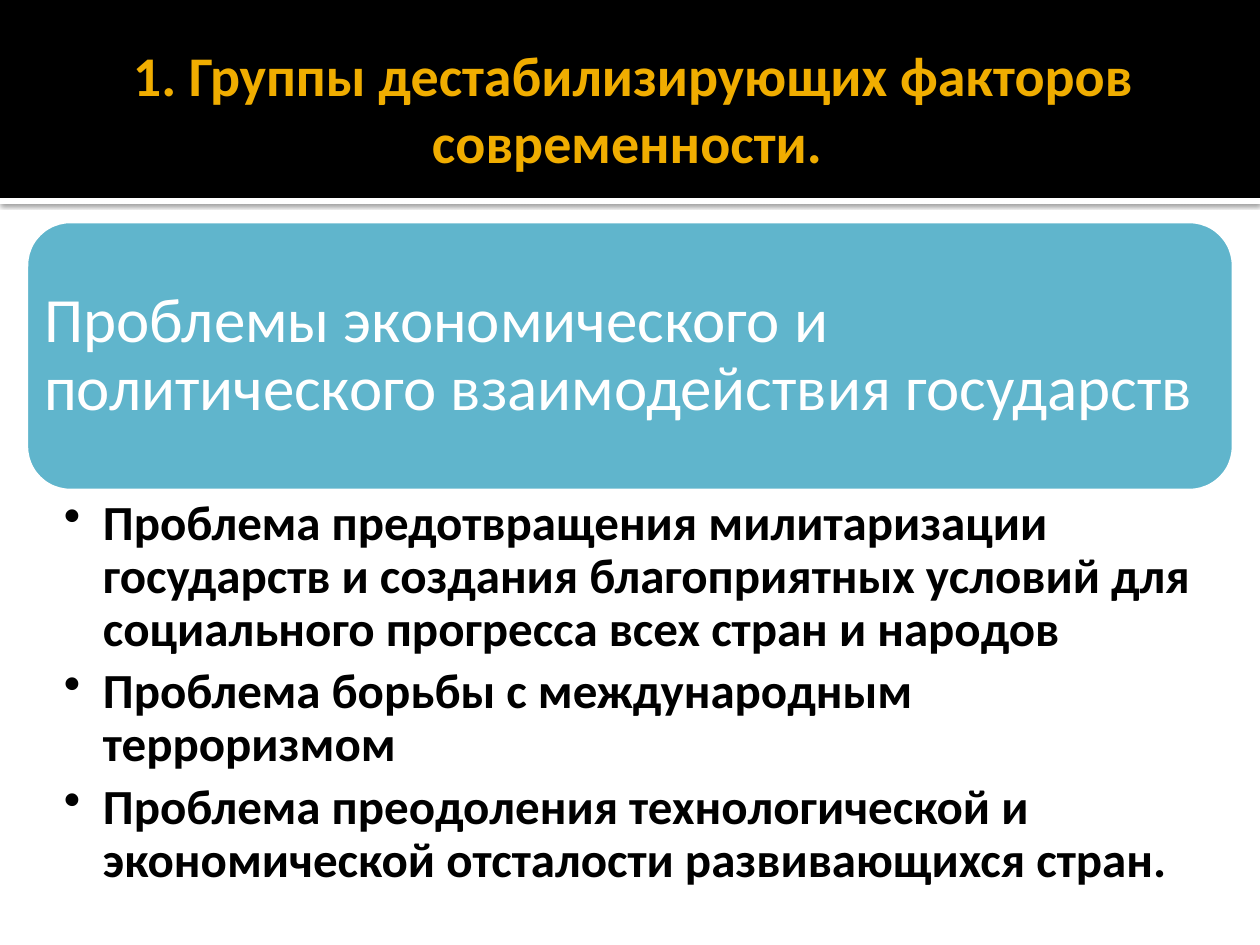
from lxml import etree
from pptx import Presentation
from pptx.dml.color import RGBColor
from pptx.enum.shapes import MSO_SHAPE
from pptx.enum.text import MSO_ANCHOR, PP_ALIGN
from pptx.oxml import parse_xml
from pptx.oxml.ns import nsdecls, qn
from pptx.util import Emu, Pt

RECT, ROUND = MSO_SHAPE.RECTANGLE, MSO_SHAPE.ROUNDED_RECTANGLE
TOP, MIDDLE = MSO_ANCHOR.TOP, MSO_ANCHOR.MIDDLE
LEFT, CENTER = PP_ALIGN.LEFT, PP_ALIGN.CENTER
FONT = "Calibri"
BLACK, WHITE, GOLD, BLUE = "000000", "FFFFFF", "F0AD00", "60B5CC"

TITLE = "1. Группы дестабилизирующих факторов современности. "
TOPIC = "Проблемы экономического и политического взаимодействия государств"
POINTS = [
    "Проблема предотвращения милитаризации государств и создания "
    "благоприятных условий для социального прогресса всех стран и народов",
    "Проблема борьбы с международным терроризмом",
    "Проблема преодоления технологической и экономической отсталости "
    "развивающихся стран.",
]


def px(n):
    return Emu(round(n * 914400 / 126))


def color(code):
    return RGBColor.from_string(code)


def block(slide, kind, box, fill):
    shape = slide.shapes.add_shape(kind, *map(px, box))
    shape.shadow.inherit = False
    shape.fill.solid()
    shape.fill.fore_color.rgb = color(fill)
    shape.line.fill.background()
    return shape


def write(frame, lines, size, ink, pads, bold=False, anchor=TOP,
          align=LEFT, lead=1.0, after=0):
    frame.word_wrap = True
    frame.vertical_anchor = anchor
    (frame.margin_left, frame.margin_top,
     frame.margin_right, frame.margin_bottom) = map(px, pads)
    frame.text = "\n".join(lines)
    for para in frame.paragraphs:
        para.alignment = align
        para.line_spacing = lead
        para.space_after = Pt(after)
        for run in para.runs:
            font = run.font
            font.name, font.size, font.bold = FONT, Pt(size), bold
            font.color.rgb = color(ink)


def bullet(para, indent):
    props = para._p.get_or_add_pPr()
    props.set("marL", str(px(indent)))
    props.set("indent", str(-px(indent)))
    etree.SubElement(props, qn("a:buChar")).set("char", "•")


def header(slide, box):
    left, top, width, height = box
    # White rule with a soft shadow under the band
    rule = block(slide, RECT, (left, top + height, width, 6), WHITE)
    effects = rule._element.spPr.find(qn("a:effectLst"))
    effects.append(parse_xml(
        f'<a:outerShdw {nsdecls("a")} blurRad="31750" dist="10160" '
        'dir="5400000" algn="tl" rotWithShape="0"><a:srgbClr val="000000">'
        '<a:alpha val="60000"/></a:srgbClr></a:outerShdw>'))
    block(slide, RECT, box, BLACK)
    # Title
    area = (left + 63, top + 21, width - 126, height - 25)
    title = slide.shapes.add_textbox(*map(px, area))
    write(title.text_frame, [TITLE], 32, GOLD, (13, 6, 6, 6),
          bold=True, anchor=MIDDLE, align=CENTER)


def topic(slide, box):
    card = block(slide, ROUND, box, BLUE)
    card.line.color.rgb = color(WHITE)
    card.line.width = Pt(3.78)
    write(card.text_frame, [TOPIC], 36, WHITE, (6, 19, 6, 19),
          anchor=MIDDLE, lead=0.9)


def points(slide, box):
    area = slide.shapes.add_textbox(*map(px, box))
    write(area.text_frame, POINTS, 28, BLACK, (39, 6, 35, 6),
          bold=True, lead=0.9, after=5.6)
    for para in area.text_frame.paragraphs:
        bullet(para, 39)


def main():
    deck = Presentation()
    deck.slide_width, deck.slide_height = px(1260), px(945)
    slide = deck.slides.add_slide(deck.slide_layouts[6])
    header(slide, (0, 0, 1260, 198))
    topic(slide, (25, 220, 1210, 272))
    points(slide, (25, 492, 1210, 421))
    deck.save("out.pptx")


if __name__ == "__main__":
    main()
